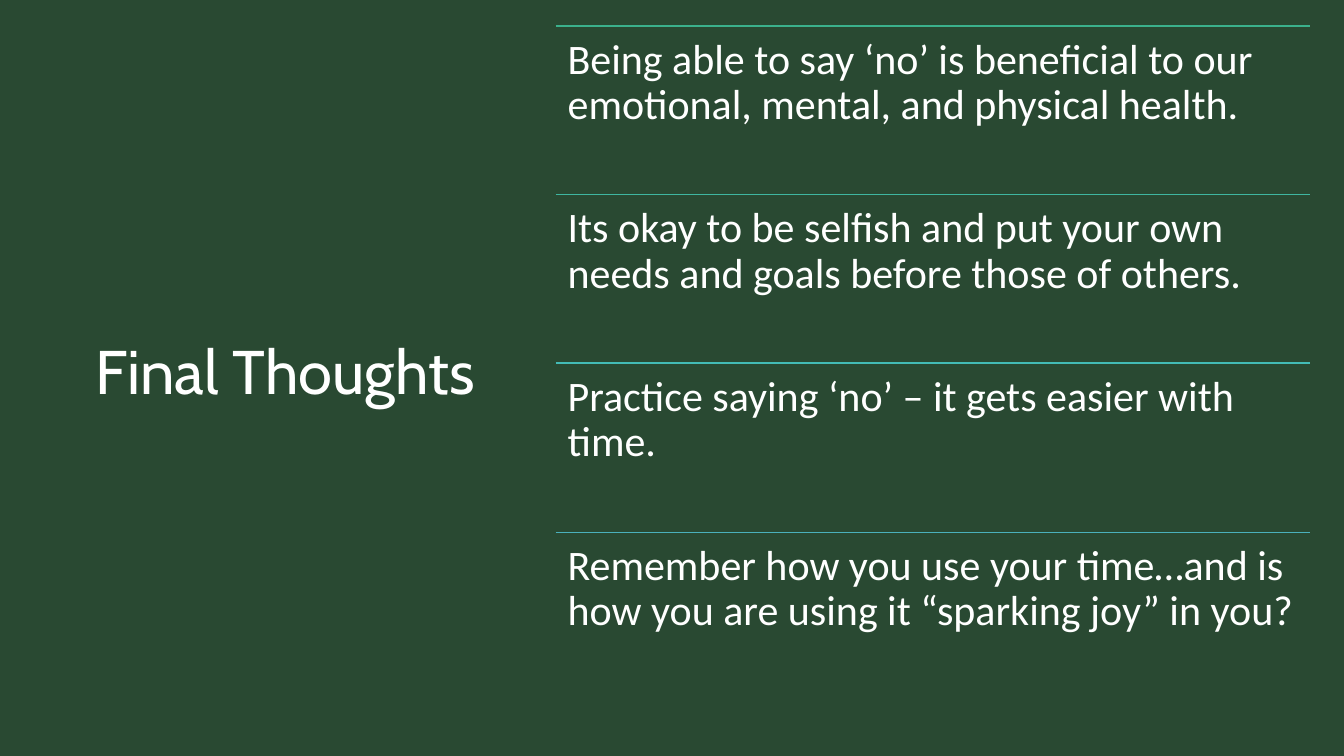
from dataclasses import dataclass

from lxml.etree import SubElement
from pptx import Presentation
from pptx.dml.color import RGBColor
from pptx.enum.shapes import MSO_CONNECTOR as Connector, MSO_SHAPE as Shape
from pptx.enum.text import MSO_ANCHOR as Anchor
from pptx.oxml.ns import qn
from pptx.slide import Slide
from pptx.util import Emu, Pt

EMU_PER_PX = 9144  # 100 px to the inch
PAGE_WIDTH, PAGE_HEIGHT = 1333, 750

WHITE = RGBColor(0xFF, 0xFF, 0xFF)
DEEP_GREEN = RGBColor(0x1B, 0x30, 0x21)
FOREST_GREEN = RGBColor(0x2B, 0x4C, 0x34)
JADE = RGBColor(0x3B, 0xB1, 0x8C)
SEA_GREEN = RGBColor(0x3F, 0xB6, 0xA1)
TURQUOISE = RGBColor(0x43, 0xBB, 0xB6)
SKY_TEAL = RGBColor(0x4A, 0xB0, 0xBC)

LIST_LEFT, LIST_TOP, LIST_WIDTH = 551, 26, 748
ROW_PITCH = 167.25


@dataclass(frozen=True)
class Thought:
    text: str
    rule_color: RGBColor


@dataclass(frozen=True)
class TextStyle:
    font: str
    size: int
    anchor: Anchor
    side_inset: int
    end_inset: int


TITLE_STYLE = TextStyle("Cabin", 44, Anchor.MIDDLE, 10, 5)
THOUGHT_STYLE = TextStyle("Calibri", 30, Anchor.TOP, 12, 12)

THOUGHTS = [
    Thought("Being able to say ‘no’ is beneficial to our emotional, mental, "
            "and physical health.", JADE),
    Thought("Its okay to be selfish and put your own needs and goals before "
            "those of others.", SEA_GREEN),
    Thought("Practice saying ‘no’ – it gets easier with time.", TURQUOISE),
    Thought("Remember how you use your time…and is how you are using it "
            "“sparking joy” in you?", SKY_TEAL),
]


def px(length: int) -> Emu:
    return Emu(length * EMU_PER_PX)


def add_backdrop(page: Slide, color: RGBColor, opacity: int = 100) -> None:
    """Cover the whole page with a colour; opacity is in percent."""
    panel = page.shapes.add_shape(Shape.RECTANGLE, 0, 0, px(PAGE_WIDTH), px(PAGE_HEIGHT))
    panel.shadow.inherit = False
    panel.line.fill.background()
    panel.fill.solid()
    panel.fill.fore_color.rgb = color
    if opacity < 100:
        color_node = panel.fill._xPr.find(f".//{qn('a:srgbClr')}")
        SubElement(color_node, qn("a:alpha"), val=str(opacity * 1000))


def add_text(page: Slide, text: str, left: int, top: int, width: int, height: int,
             style: TextStyle) -> None:
    box = page.shapes.add_textbox(px(left), px(top), px(width), px(height))
    frame = box.text_frame
    frame_format = {
        "word_wrap": True,
        "vertical_anchor": style.anchor,
        "margin_left": px(style.side_inset),
        "margin_right": px(style.side_inset),
        "margin_top": px(style.end_inset),
        "margin_bottom": px(style.end_inset),
    }
    for name, value in frame_format.items():
        setattr(frame, name, value)
    para = frame.paragraphs[0]
    para.line_spacing = 0.9
    span = para.add_run()
    span.text = text
    for name, value in {"name": style.font, "size": Pt(style.size)}.items():
        setattr(span.font, name, value)
    span.font.color.rgb = WHITE


def add_rule(page: Slide, top: int, color: RGBColor) -> None:
    rule = page.shapes.add_connector(Connector.STRAIGHT, px(LIST_LEFT), px(top),
                                     px(LIST_LEFT + LIST_WIDTH), px(top))
    rule.line.color.rgb = color
    rule.line.width = Pt(1)
    SubElement(rule._element.spPr, qn("a:effectLst"))


def main() -> None:
    deck = Presentation()
    deck.slide_width, deck.slide_height = px(PAGE_WIDTH), px(PAGE_HEIGHT)
    page = deck.slides.add_slide(deck.slide_layouts[6])
    page.background.fill.solid()
    page.background.fill.fore_color.rgb = DEEP_GREEN

    add_backdrop(page, DEEP_GREEN)
    add_backdrop(page, FOREST_GREEN, opacity=90)
    add_text(page, "Final Thoughts", 85, 54, 432, 636, TITLE_STYLE)

    for row, thought in enumerate(THOUGHTS):
        top = LIST_TOP + round(row * ROW_PITCH)
        add_rule(page, top, thought.rule_color)
        add_text(page, thought.text, LIST_LEFT, top, LIST_WIDTH, round(ROW_PITCH),
                 THOUGHT_STYLE)

    deck.save("out.pptx")


if __name__ == "__main__":
    main()
